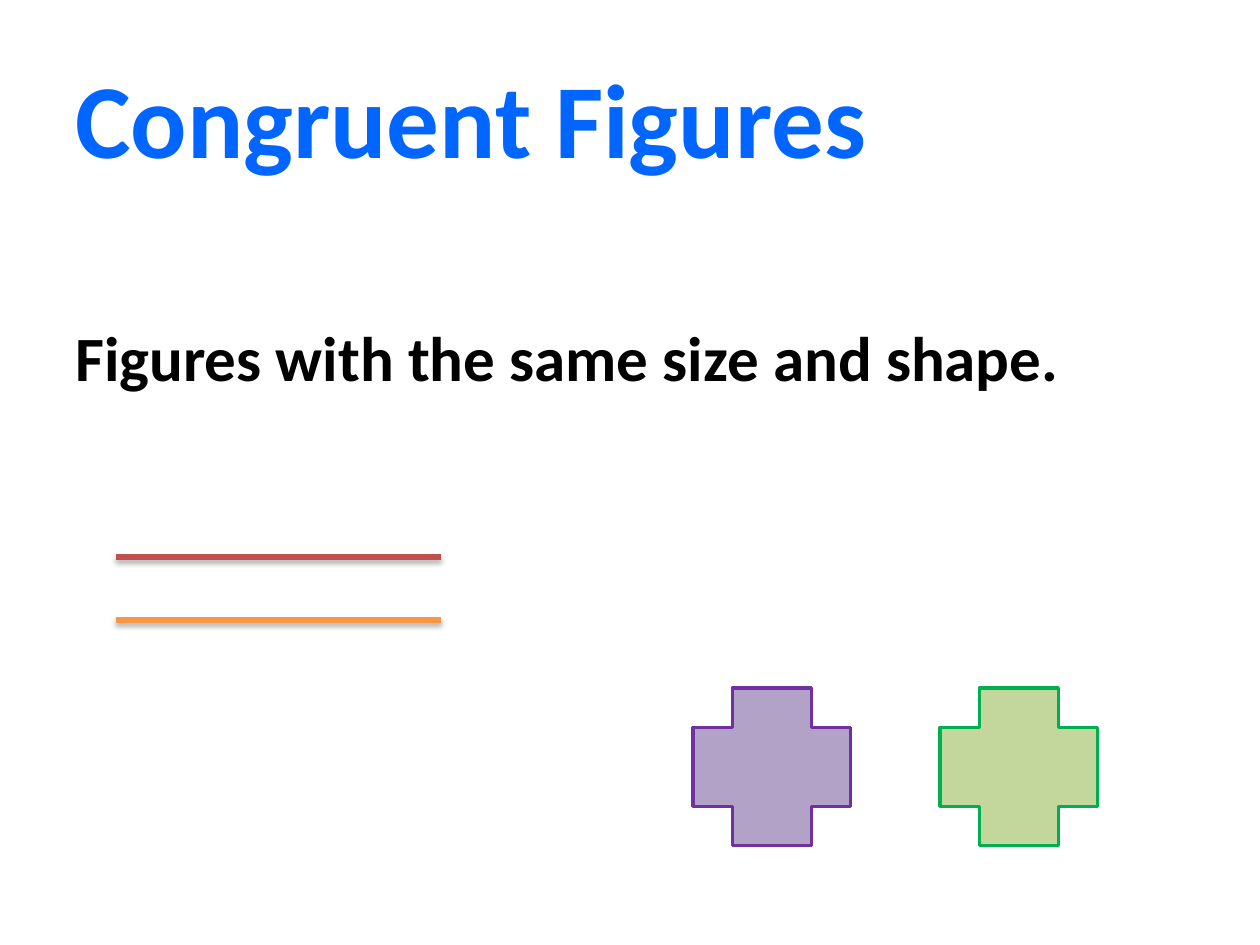
from lxml.etree import SubElement
from pptx import Presentation
from pptx.dml.color import RGBColor
from pptx.enum.shapes import MSO_CONNECTOR, MSO_SHAPE
from pptx.enum.text import MSO_ANCHOR
from pptx.oxml.ns import qn
from pptx.util import Cm, Pt

BLUE = RGBColor(0x00, 0x66, 0xFF)
BLACK = RGBColor(0x00, 0x00, 0x00)
LILAC = RGBColor(0xB3, 0xA2, 0xC7)
PURPLE = RGBColor(0x70, 0x30, 0xA0)
LIME = RGBColor(0xC3, 0xD6, 0x9B)
GREEN = RGBColor(0x00, 0xB0, 0x50)
RED = RGBColor(0xC0, 0x50, 0x4D)
ORANGE = RGBColor(0xF7, 0x96, 0x46)


def add_text(slide, text, top, height, size, color, anchor):
    box = slide.shapes.add_textbox(Cm(1.27), Cm(top), Cm(22.86), Cm(height))
    frame = box.text_frame
    frame.word_wrap = True
    frame.vertical_anchor = anchor
    para = frame.paragraphs[0]
    para.text = text
    font = para.font
    font.name, font.size, font.bold = "Calibri", Pt(size), True
    font.color.rgb = color


def add_cross(slide, left, fill, edge):
    cross = slide.shapes.add_shape(
        MSO_SHAPE.CROSS, Cm(left), Cm(13.87), Cm(3.18), Cm(3.18))
    cross.shadow.inherit = False
    cross.fill.solid()
    cross.fill.fore_color.rgb = fill
    cross.line.color.rgb = edge
    cross.line.width = Pt(2)


def add_line(slide, top, color):
    line = slide.shapes.add_connector(
        MSO_CONNECTOR.STRAIGHT, Cm(2.33), Cm(top), Cm(8.89), Cm(top))
    line.line.color.rgb = color
    line.line.width = Pt(3)
    # Soft shadow straight below the line
    effects = SubElement(line._element.spPr, qn("a:effectLst"))
    shadow = SubElement(effects, qn("a:outerShdw"), blurRad="40000",
                        dist="23000", dir="5400000", rotWithShape="0")
    black = SubElement(shadow, qn("a:srgbClr"), val="000000")
    SubElement(black, qn("a:alpha"), val="35000")


def main():
    deck = Presentation()
    deck.slide_width, deck.slide_height = Cm(25.4), Cm(19.05)
    slide = deck.slides.add_slide(deck.slide_layouts[6])

    # Title and definition
    add_text(slide, "Congruent Figures", 0.76, 3.18, 60, BLUE,
             MSO_ANCHOR.MIDDLE)
    add_text(slide, "Figures with the same size and shape.", 6.3, 2, 36,
             BLACK, MSO_ANCHOR.TOP)

    # Congruent crosses
    add_cross(slide, 13.97, LILAC, PURPLE)
    add_cross(slide, 18.95, LIME, GREEN)

    # Congruent segments
    add_line(slide, 11.23, RED)
    add_line(slide, 12.5, ORANGE)

    deck.save("out.pptx")


if __name__ == "__main__":
    main()
